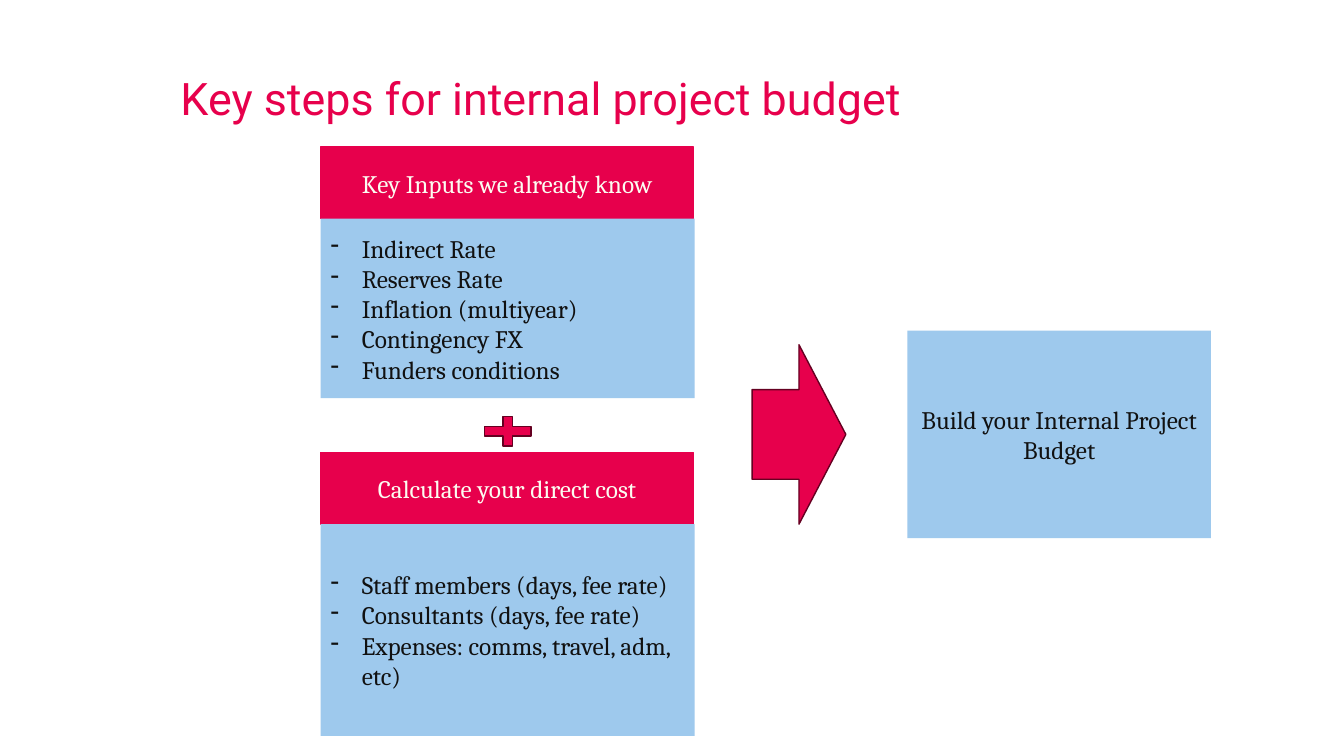
from dataclasses import dataclass

from lxml import etree
from pptx import Presentation
from pptx.dml.color import RGBColor
from pptx.enum.shapes import MSO_SHAPE as SHAPE
from pptx.enum.text import MSO_ANCHOR as ANCHOR, PP_ALIGN as ALIGN
from pptx.oxml.ns import qn
from pptx.util import Inches, Pt


@dataclass(frozen=True)
class Theme:
    accent: str = "E7004C"
    outline: str = "650021"
    panel: str = "9EC9ED"
    light: str = "FCFCF1"
    dark: str = "111111"
    title_font: str = "Roboto"
    body_font: str = "Cambria"
    title_size: int = 32
    body_size: int = 18


THEME = Theme()


def add_bullet(p, char="-", indent=0.31):
    pPr = p._p.get_or_add_pPr()
    pPr.set("marL", str(Inches(indent)))
    pPr.set("indent", str(Inches(-indent)))
    etree.SubElement(pPr, qn("a:buChar")).set("char", char)


def write(tf, text, *, color, size=THEME.body_size, font=THEME.body_font,
          align=ALIGN.LEFT, anchor=ANCHOR.MIDDLE, bullets=False, spacing=None):
    """Fill a text frame, one paragraph for each line of text."""
    tf.word_wrap = True
    tf.vertical_anchor = anchor
    for i, line in enumerate(text.split("\n")):
        p = tf.add_paragraph() if i else tf.paragraphs[0]
        if bullets:
            add_bullet(p)
        p.alignment = align
        p.line_spacing = spacing
        r = p.add_run()
        r.text = line
        r.font.name = font
        r.font.size = Pt(size)
        r.font.color.rgb = RGBColor.from_string(color)


def add_block(slide, kind, box, fill, line=None):
    sp = slide.shapes.add_shape(kind, *map(Inches, box))
    sp.shadow.inherit = False
    sp.fill.solid()
    sp.fill.fore_color.rgb = RGBColor.from_string(fill)
    if line:
        sp.line.color.rgb = RGBColor.from_string(line)
        sp.line.width = Pt(1)
    else:
        sp.line.fill.background()
    return sp


def add_title(slide, box, text):
    tf = slide.shapes.add_textbox(*map(Inches, box)).text_frame
    tf.margin_left = tf.margin_right = tf.margin_top = tf.margin_bottom = 0
    write(tf, text, color=THEME.accent, size=THEME.title_size,
          font=THEME.title_font, anchor=ANCHOR.TOP, spacing=0.9)


def add_card(slide, box, heading, items, head_height=0.71):
    """A heading bar with a bulleted panel filling the rest of the box."""
    x, y, w, h = box
    head = add_block(slide, SHAPE.RECTANGLE, (x, y, w, head_height),
                     THEME.accent, THEME.accent)
    write(head.text_frame, heading, color=THEME.light, align=ALIGN.CENTER)
    panel = add_block(slide, SHAPE.RECTANGLE,
                      (x, y + head_height, w + 0.01, h - head_height), THEME.panel)
    write(panel.text_frame, "\n".join(items), color=THEME.dark, bullets=True)


def add_result(slide, box, text):
    sp = add_block(slide, SHAPE.RECTANGLE, box, THEME.panel)
    write(sp.text_frame, text, color=THEME.dark, align=ALIGN.CENTER)


def build_budget_slide(prs):
    slide = prs.slides.add_slide(prs.slide_layouts[6])
    add_title(slide, (1.79, 0.76, 10.63, 0.66), "Key steps for internal project budget")

    # Inputs and direct costs
    add_card(slide, (3.18, 1.46, 3.7, 2.49), "Key Inputs we already know",
             ["Indirect Rate", "Reserves Rate", "Inflation (multiyear)",
              "Contingency FX", "Funders conditions"])
    add_card(slide, (3.18, 4.49, 3.7, 2.81), "Calculate your direct cost",
             ["Staff members (days, fee rate)", "Consultants (days, fee rate)",
              "Expenses: comms, travel, adm, etc)"])

    # Resulting budget
    add_result(slide, (9, 3.28, 3.01, 2.06), "Build your Internal Project Budget")

    # Plus sign and arrow joining the parts
    for kind, box in ((SHAPE.RIGHT_ARROW, (7.46, 3.42, 0.93, 1.78)),
                      (SHAPE.MATH_PLUS, (4.72, 4.08, 0.63, 0.4))):
        add_block(slide, kind, box, THEME.accent, THEME.outline)


def main():
    prs = Presentation()
    prs.slide_width, prs.slide_height = Inches(13.33), Inches(7.5)
    build_budget_slide(prs)
    prs.save("out.pptx")


if __name__ == "__main__":
    main()
